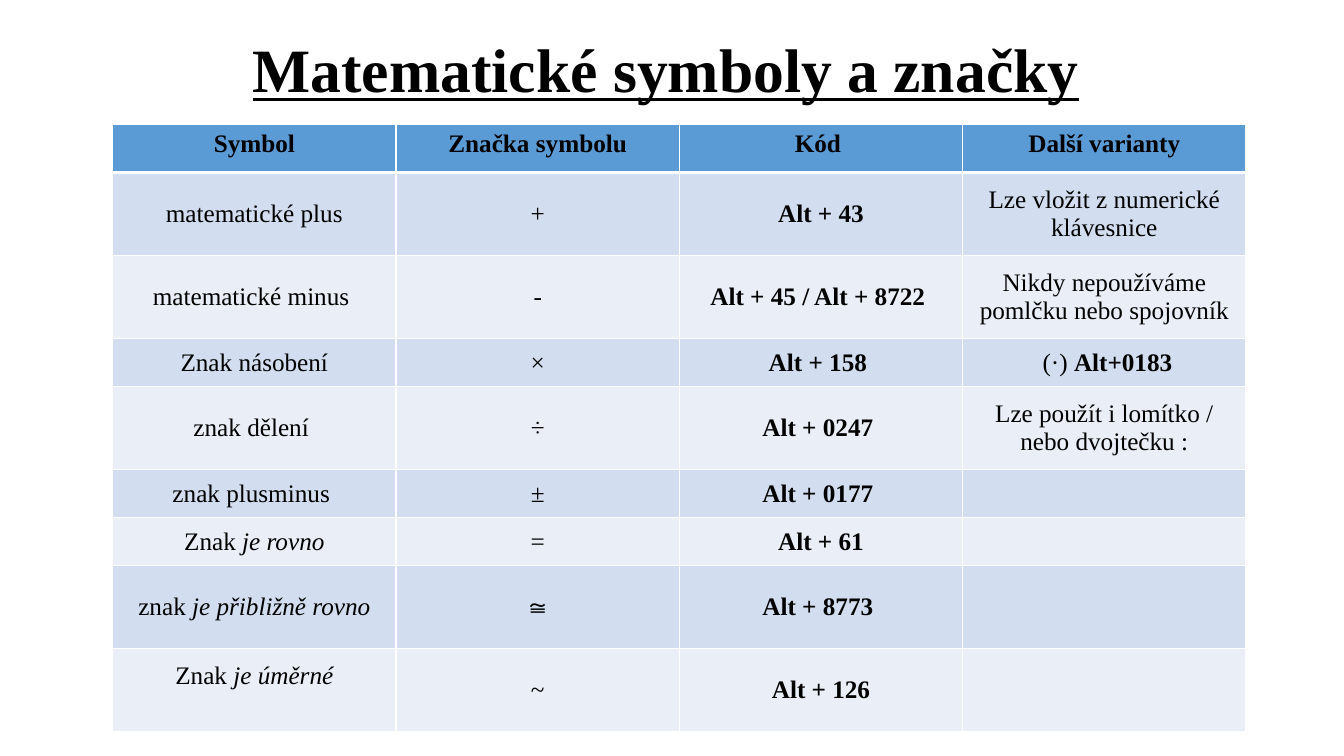
"""Build a slide with a table of mathematical symbols and their Alt codes."""
from lxml import etree
from pptx import Presentation
from pptx import util as u
from pptx.dml.color import RGBColor
from pptx.enum import text
from pptx.oxml import ns

COLORS = {"text": "000000", "head": "5B9BD5", "odd": "D2DEEF",
          "even": "EAEFF7", "border": "FFFFFF"}
FONT = "Times New Roman"
TALL, SHORT = u.Cm(2.09), u.Cm(1.21)
HEADERS = ["Symbol", "Značka symbolu", "Kód ", "Další varianty"]
ROWS = [
    (TALL, "matematické plus", "", "+", "Alt + 43", "Lze vložit z numerické klávesnice", ""),
    (TALL, "matematické minus ", "", "-", "Alt + 45 / Alt + 8722 ",
     "Nikdy nepoužíváme pomlčku nebo spojovník", ""),
    (SHORT, "Znak násobení", "", "×", "Alt + 158 ", " (·) ", "Alt+0183"),
    (TALL, "znak dělení ", "", "÷", "Alt + 0247 ", "Lze použít i lomítko / nebo dvojtečku :", ""),
    (SHORT, "znak plusminus ", "", "±", "Alt + 0177 ", "", ""),
    (SHORT, "Znak ", "je rovno", "=", "Alt + 61", "", ""),
    (TALL, "znak ", "je přibližně rovno", "≅", "Alt + 8773 ", "", ""),
    (TALL, "Znak ", "je úměrné", "~", "Alt + 126", "", ""),
]


def add_runs(p, runs, size=18):
    """Fill a centred paragraph with (text, format) runs."""
    p.alignment = text.PP_ALIGN.CENTER
    for content, fmt in runs:
        if not content:
            continue
        r = p.add_run()
        r.text = content
        r.font.color.rgb = RGBColor.from_string(COLORS["text"])
        values = {"name": FONT, "size": u.Pt(size), "bold": False, "italic": False}
        for name, value in {**values, **fmt}.items():
            setattr(r.font, name, value)


def add_title(s, content):
    """Add the underlined heading."""
    sp = s.shapes.add_textbox(u.Cm(2.18), 0, u.Cm(29.21), u.Cm(3.68))
    tf = sp.text_frame
    tf.word_wrap = True
    tf.vertical_anchor = text.MSO_ANCHOR.MIDDLE
    p = tf.paragraphs[0]
    p.line_spacing = 0.9
    add_runs(p, [(content, {"bold": True, "underline": True})], 44)


def set_borders(cell, bottom):
    """Draw solid borders round a cell, the bottom one in its own width."""
    tc_pr = cell._tc.get_or_add_tcPr()
    for side, width in {"L": 1, "R": 1, "T": 1, "B": bottom}.items():
        ln = etree.SubElement(tc_pr, ns.qn(f"a:ln{side}"), w=str(u.Pt(width)))
        fill = etree.SubElement(ln, ns.qn("a:solidFill"))
        etree.SubElement(fill, ns.qn("a:srgbClr"), val=COLORS["border"])


def fill_cell(cell, runs, color, anchor, bottom=1):
    """Style one cell and write its runs."""
    set_borders(cell, bottom)
    cell.fill.solid()
    cell.fill.fore_color.rgb = RGBColor.from_string(COLORS[color])
    cell.vertical_anchor = anchor
    add_runs(cell.text_frame.paragraphs[0], runs)


def add_symbol_table(s):
    """Add the table with its header and banded rows."""
    heights = [SHORT] + [row[0] for row in ROWS]
    width = u.Cm(7.14)
    table = s.shapes.add_table(len(heights), len(HEADERS), u.Cm(2.84), u.Cm(3.14),
                               width * len(HEADERS), sum(heights)).table
    for column in table.columns:
        column.width = width
    for row, height in zip(table.rows, heights):
        row.height = height
    bold = {"bold": True}
    for col, header in enumerate(HEADERS):
        fill_cell(table.cell(0, col), [(header, bold)], "head", text.MSO_ANCHOR.TOP, 3)
    for i, (_, name, relation, symbol, code, note, key) in enumerate(ROWS, 1):
        cells = [[(name, {}), (relation, {"italic": True})], [(symbol, {})],
                 [(code, bold)], [(note, {}), (key, bold)]]
        for col, runs in enumerate(cells):
            fill_cell(table.cell(i, col), runs, "odd" if i % 2 else "even",
                      text.MSO_ANCHOR.MIDDLE)
    table.cell(len(ROWS), 0).margin_bottom = u.Cm(0.84)


def main():
    """Create and save the presentation."""
    prs = Presentation()
    prs.slide_width, prs.slide_height = u.Cm(33.87), u.Cm(19.05)
    s = prs.slides.add_slide(prs.slide_layouts[6])
    add_title(s, "Matematické symboly a značky")
    add_symbol_table(s)
    prs.save("out.pptx")


if __name__ == "__main__":
    main()
